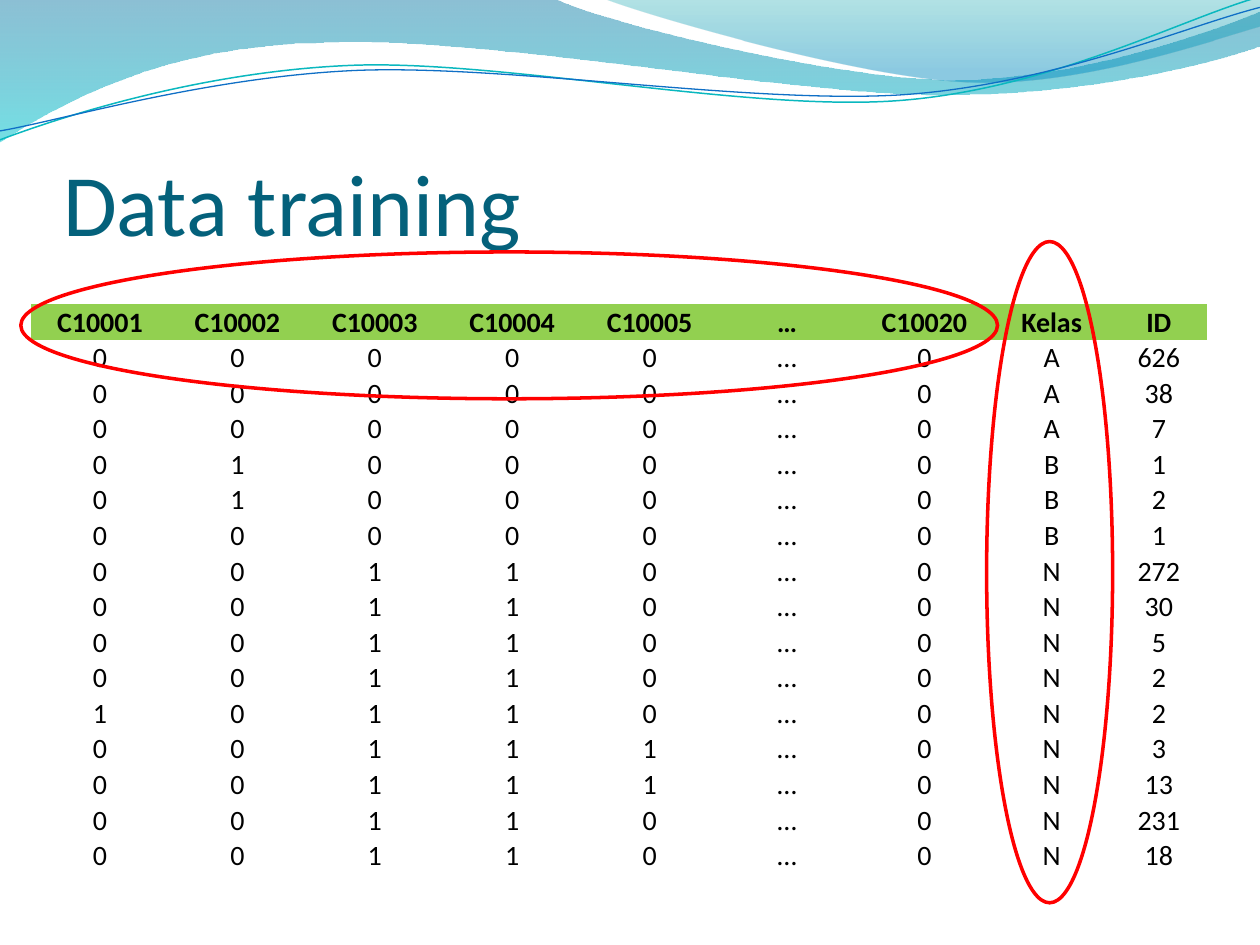
from pptx import Presentation
from pptx.dml.color import RGBColor
from pptx.enum.shapes import MSO_SHAPE
from pptx.enum.text import MSO_ANCHOR, MSO_AUTO_SIZE, PP_ALIGN
from pptx.oxml.ns import qn
from pptx.util import Cm, Pt
from lxml.etree import SubElement


def paint(target, color):
    target.rgb = RGBColor.from_string(color)


def draw(shapes, start, legs, close):
    points = [(Cm(leg[n]), Cm(leg[n + 1]))
              for leg in legs for n in range(0, len(leg), 2)]
    pen = shapes.build_freeform(Cm(start[0]), Cm(start[1]))
    pen.add_line_segments(points, close=close)
    shape = pen.convert_to_shape()
    shape.shadow.inherit = False
    nodes = iter(shape.element.xpath(".//a:lnTo"))
    for leg in legs:
        node = next(nodes)
        if len(leg) == 6:
            curve = node.makeelement(qn("a:cubicBezTo"))
            node.addprevious(curve)
            for part in (node, next(nodes), next(nodes)):
                curve.append(part[0])
                part.getparent().remove(part)
    return shape


deck = Presentation()
deck.slide_width, deck.slide_height = Cm(25.4), Cm(19.05)
slide = deck.slides.add_slide(deck.slide_layouts[5])
shapes = slide.shapes

waves = [
    ((0, -0.03),
     [(11.18, -0.03), (12.09, 0.43, 16.87, 1.6, 19.25, 1.6),
      (21.67, 1.6, 24.33, 0.66, 25.4, 0.23), (25.43, 0.91),
      (24.97, 1.12, 22.1, 1.93, 18.95, 1.91),
      (15.8, 1.91, 9.7, 0.71, 6.53, 0.86),
      (3.28, 0.89, 1.17, 2.11, -0.03, 2.87), (0, -0.03)],
     [(0, "0074A1", 45), (1, "00C6CF", 55)]),
    ((12.17, -0.03),
     [(12.93, 0.28, 17.32, 1.57, 19.53, 1.65),
      (21.74, 1.75, 24.41, 0.81, 25.4, 0.53), (25.4, 0), (12.17, -0.03)],
     [(0, "00A1A9", 30), (0.8, "008BBF", 45)]),
]
for start, legs, stops in waves:
    wave = draw(shapes, start, legs, True)
    wave.line.fill.background()
    wave.fill.gradient()
    wave.fill.gradient_angle = 270
    for stop, (place, color, alpha) in zip(wave.fill.gradient_stops, stops):
        stop.position = place
        paint(stop.color, color)
    for node, stop in zip(wave.element.xpath(".//a:gs/a:srgbClr"), stops):
        SubElement(node, qn("a:alpha")).set("val", str(stop[2] * 1000))

threads = [
    ((0, 2.82),
     [(1.22, 2.36, 4.01, 1.45, 7.04, 1.32),
      (10.03, 1.19, 15.06, 2.26, 18.11, 2.03),
      (21.16, 1.8, 23.83, 0.38, 25.35, -0.05)], "0AB8BF", 0.85),
    ((0, 2.64),
     [(1.19, 2.44, 4.17, 1.55, 7.19, 1.42),
      (10.24, 1.3, 15.16, 2.11, 18.21, 1.91),
      (21.23, 1.7, 23.9, 0.53, 25.4, 0.15)], "0F6FC6", 0.75),
]
for start, legs, color, width in threads:
    thread = draw(shapes, start, legs, False)
    thread.fill.background()
    paint(thread.line.color, color)
    thread.line.width = Pt(width)

data = """C10001 C10002 C10003 C10004 C10005 … C10020 Kelas ID
0 0 0 0 0 … 0 A 626
0 0 0 0 0 … 0 A 38
0 0 0 0 0 … 0 A 7
0 1 0 0 0 … 0 B 1
0 1 0 0 0 … 0 B 2
0 0 0 0 0 … 0 B 1
0 0 1 1 0 … 0 N 272
0 0 1 1 0 … 0 N 30
0 0 1 1 0 … 0 N 5
0 0 1 1 0 … 0 N 2
1 0 1 1 0 … 0 N 2
0 0 1 1 1 … 0 N 3
0 0 1 1 1 … 0 N 13
0 0 1 1 0 … 0 N 231
0 0 1 1 0 … 0 N 18"""
rows = [line.split() for line in data.splitlines()]
widths = [2.77] * 7 + [2.36, 1.96]
holder = shapes.add_table(len(rows), len(widths), Cm(0.63), Cm(6.13),
                          Cm(sum(widths)), Cm(0.61 * len(rows)))
table = holder.table
for style in holder.element.xpath(".//a:tableStyleId"):
    style.text = "{2D5ABB26-0587-4C30-8999-92F81FD0307C}"
table.horz_banding = False
for column, width in zip(table.columns, widths):
    column.width = Cm(width)
holder.height = Cm(11.23)
inset = {"margin_left": Pt(0.75), "margin_right": Pt(0.75),
         "margin_top": Pt(0.75), "margin_bottom": 0,
         "vertical_anchor": MSO_ANCHOR.BOTTOM}
for r, row in enumerate(rows):
    for c, text in enumerate(row):
        cell = table.cell(r, c)
        cell.text = text
        for key, value in inset.items():
            setattr(cell, key, value)
        if r == 0:
            cell.fill.solid()
            paint(cell.fill.fore_color, "92D050")
        else:
            cell.fill.background()
        para = cell.text_frame.paragraphs[0]
        para.alignment = PP_ALIGN.CENTER
        font = para.runs[0].font
        look = {"name": "Calibri", "size": Pt(16), "bold": r == 0}
        for key, value in look.items():
            setattr(font, key, value)
        paint(font.color, "000000")

title = shapes.title
holder.element.addnext(title.element)
place = {"left": Cm(1.27), "top": Cm(1.96), "width": Cm(23.06), "height": Cm(3.17)}
for key, value in place.items():
    setattr(title, key, value)
frame = title.text_frame
frame.text = "Data training"
layout = {"margin_left": 0, "margin_right": 0, "margin_top": Cm(0.13),
          "margin_bottom": 0, "vertical_anchor": MSO_ANCHOR.BOTTOM,
          "auto_size": MSO_AUTO_SIZE.NONE, "word_wrap": True}
for key, value in layout.items():
    setattr(frame, key, value)
frame.paragraphs[0].alignment = PP_ALIGN.LEFT
font = frame.paragraphs[0].runs[0].font
for key, value in {"name": "Calibri", "size": Pt(50), "bold": False}.items():
    setattr(font, key, value)
paint(font.color, "04617B")

for box in [(19.89, 4.87, 2.54, 13.33), (0.42, 5.08, 19.69, 2.96)]:
    ring = shapes.add_shape(MSO_SHAPE.OVAL, *map(Cm, box))
    ring.shadow.inherit = False
    ring.fill.background()
    paint(ring.line.color, "FF0000")
    ring.line.width = Pt(2)

deck.save("out.pptx")
